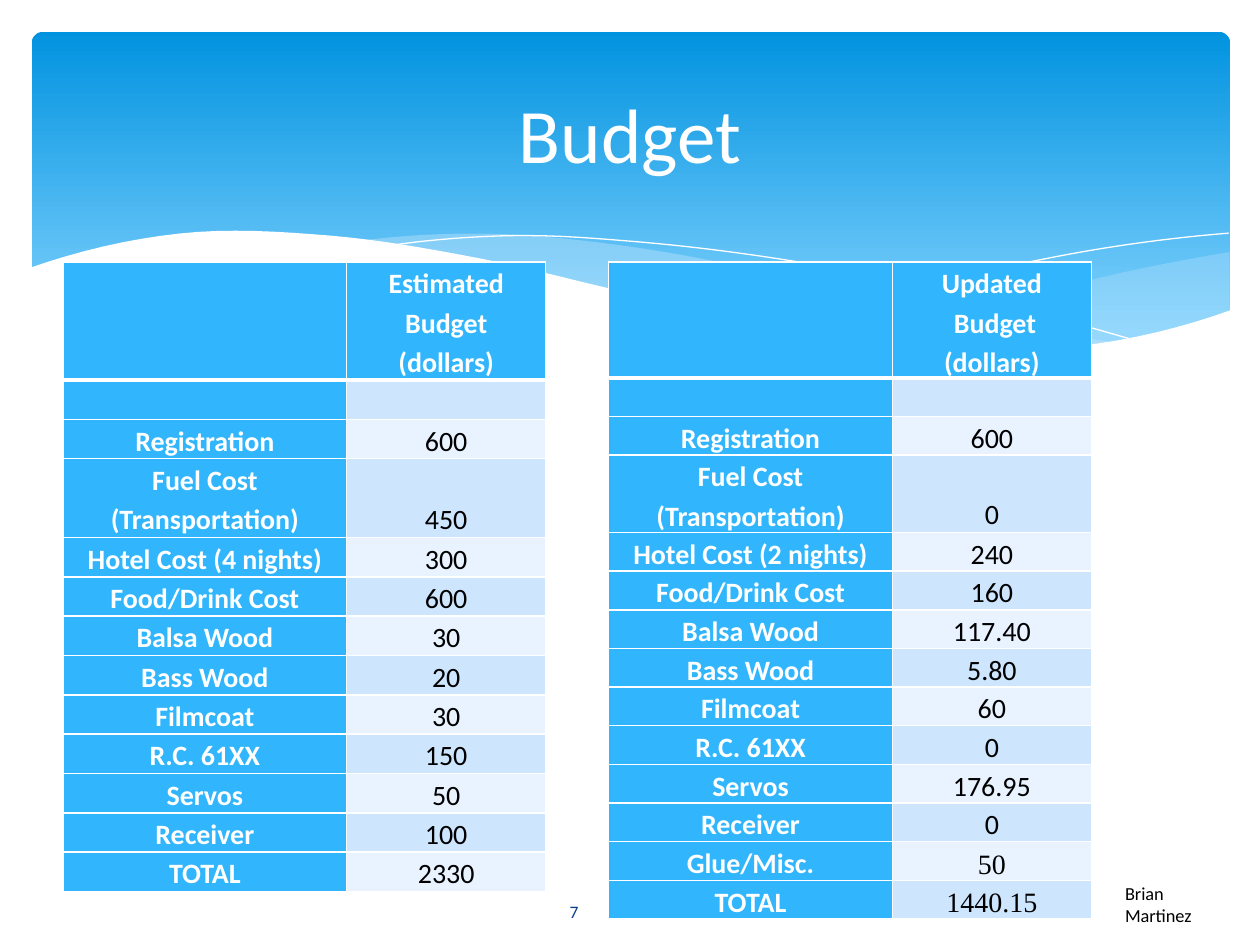
from lxml.etree import SubElement
from pptx import Presentation
from pptx.dml.color import RGBColor
from pptx.enum.shapes import MSO_SHAPE
from pptx.enum.text import MSO_ANCHOR, PP_ALIGN
from pptx.oxml import parse_xml
from pptx.oxml.ns import nsdecls, qn
from pptx.util import Cm, Pt

WHITE = RGBColor(0xFF, 0xFF, 0xFF)
BLACK = RGBColor(0, 0, 0)
NAVY = RGBColor(0x07, 0x3E, 0x87)
DEEP = RGBColor(0x02, 0x93, 0xE0)
SKY = RGBColor(0x83, 0xD3, 0xFE)
MIST = RGBColor(0xC6, 0xE7, 0xFC)
BLUE = RGBColor(0x31, 0xB6, 0xFD)
PALE = RGBColor(0xE8, 0xF3, 0xFF)
TINT = RGBColor(0xCE, 0xE5, 0xFE)
SANS, SERIF = "Calibri", "Times New Roman"

# Item, estimated cost, updated cost; None leaves the item out
ITEMS = [
    ("", "", ""),
    ("Registration", "600", "600"),
    ("Fuel Cost (Transportation)", "450", "0"),
    ("Hotel Cost ({} nights)", "300", "240"),
    ("Food/Drink Cost", "600", "160"),
    ("Balsa Wood", "30", "117.40"),
    ("Bass Wood", "20", "5.80"),
    ("Filmcoat", "30", "60"),
    ("R.C. 61XX", "150", "0"),
    ("Servos", "50", "176.95"),
    ("Receiver", "100", "0"),
    ("Glue/Misc.", None, "50"),
    ("TOTAL", "2330", "1440.15"),
]
TALL = {"Fuel Cost (Transportation)": 2}  # items that take more lines
HEAD = 3  # lines in the header row


def style(para, size, color, face=SANS, bold=False):
    font = para.font
    font.size, font.name, font.bold = Pt(size), face, bold
    font.color.rgb = color


def add_text(slide, box, text, size, color, align=PP_ALIGN.CENTER,
             anchor=MSO_ANCHOR.MIDDLE):
    frame = slide.shapes.add_textbox(*map(Cm, box)).text_frame
    frame.word_wrap = True
    frame.vertical_anchor = anchor
    para = frame.paragraphs[0]
    para.text, para.alignment = text, align
    style(para, size, color)


def add_band(slide):
    band = slide.shapes.add_shape(
        MSO_SHAPE.ROUNDED_RECTANGLE, Cm(0.64), Cm(0.64), Cm(24.16), Cm(6.86))
    band.adjustments[0] = 0.034
    band.shadow.inherit = False
    band.line.fill.background()
    band.fill.gradient()
    band.fill.gradient_angle = 270
    for stop, color, pos in zip(band.fill.gradient_stops, (DEEP, SKY), (0, 0.9)):
        stop.color.rgb, stop.position = color, pos


def smooth(left, right, knots, steps=8):
    """Curve through evenly spaced heights (Catmull-Rom), as points in cm."""
    first = 3 * knots[0] - 3 * knots[1] + knots[2]
    last = 3 * knots[-1] - 3 * knots[-2] + knots[-3]
    full = [first, *knots, last]
    gap = (right - left) / (len(knots) - 1)
    points = []
    for i in range(len(knots) - 1):
        a, b, c, d = full[i:i + 4]
        for k in range(steps):
            t = k / steps
            y = b + t / 2 * (c - a + t * (2 * a - 5 * b + 4 * c - d
                                          + t * (3 * b - a - 3 * c + d)))
            points.append((left + gap * (i + t), y))
    return points + [(right, knots[-1])]


def trace(slide, points, close):
    spots = [(Cm(x), Cm(y)) for x, y in points]
    path = slide.shapes.build_freeform(*spots[0])
    path.add_line_segments(spots[1:], close=close)
    shape = path.convert_to_shape()
    shape.shadow.inherit = False
    return shape


def add_wave(slide, left, right, top, base, color, alpha=100):
    """Fill the area between two curves; alpha is a percentage."""
    edge = smooth(left, right, top) + smooth(left, right, base)[::-1]
    wave = trace(slide, edge, True)
    wave.line.fill.background()
    wave.fill.solid()
    wave.fill.fore_color.rgb = color
    if alpha < 100:
        tint = wave.fill._xPr.find(".//" + qn("a:srgbClr"))
        SubElement(tint, qn("a:alpha")).set("val", str(alpha * 1000))


def add_crest(slide, left, right, knots):
    crest = trace(slide, smooth(left, right, knots), False)
    crest.fill.background()
    crest.line.color.rgb, crest.line.width = WHITE, Pt(0)


def add_waves(slide):
    add_wave(slide, 16.79, 24.79, (6.73, 6.36, 5.93, 5.46, 5.08),
             (6.73, 6.97, 7.05, 6.86, 6.27), MIST, 29)
    add_wave(slide, 7.26, 22.68, (4.85, 4.71, 4.93, 5.38, 6.01, 6.53, 6.93),
             (4.85, 5.28, 5.88, 6.43, 6.85, 7.05, 6.93), MIST, 40)
    add_crest(slide, 7.85, 23.04, (4.95, 4.75, 4.88, 5.18, 5.63, 6.21, 6.91))
    add_crest(slide, 15.57, 24.77, (6.53, 5.92, 5.4, 4.97, 4.7))
    # White front wave with a flat base
    add_wave(slide, 0.58, 24.82,
             (5.41, 4.71, 4.75, 5.21, 5.91, 6.53, 6.95, 6.97, 6.25),
             (8.36, 8.36, 8.36), WHITE)


def add_rules(cell, top, base):
    """Set white cell borders, with widths in points."""
    for spot, (side, width) in enumerate(zip("LRTB", (1, 1, top, base))):
        rule = parse_xml(
            f'<a:ln{side} {nsdecls("a")} w="{Pt(width)}"><a:solidFill>'
            f'<a:srgbClr val="{WHITE}"/></a:solidFill></a:ln{side}>')
        cell._tc.get_or_add_tcPr().insert(spot, rule)


def fill_cell(cell, text, back, color, face, bold):
    cell.fill.solid()
    cell.fill.fore_color.rgb = back
    cell.vertical_anchor = MSO_ANCHOR.BOTTOM
    cell.margin_left = cell.margin_right = Cm(0.18)
    cell.margin_top = cell.margin_bottom = 0
    cell.text = text
    for para in cell.text_frame.paragraphs:
        para.alignment, para.line_spacing = PP_ALIGN.CENTER, 1.15
        style(para, 16, color, face, bold)


def add_budget(slide, left, height, head, costs, nights, serif=()):
    """Add one budget; costs is the column of ITEMS to show."""
    items = [(row[0], row[costs]) for row in ITEMS if row[costs] is not None]
    rows = [("", head)] + items
    lines = [HEAD] + [TALL.get(name, 1) for name, _ in items]
    table = slide.shapes.add_table(
        len(rows), 2, Cm(left), Cm(5.28), Cm(9.73), Cm(height)).table
    for col, width in zip(table.columns, (5.72, 4.01)):
        col.width = Cm(width)
    for i, (name, cost) in enumerate(rows):
        table.rows[i].height = Cm(height * lines[i] / sum(lines))
        label, value = table.cell(i, 0), table.cell(i, 1)
        fill_cell(label, name.format(nights), BLUE, WHITE, SANS, True)
        if i == 0:
            fill_cell(value, cost, BLUE, WHITE, SANS, True)
        else:
            fill_cell(value, cost, TINT if i % 2 else PALE, BLACK,
                      SERIF if name in serif else SANS, False)
        # A thick rule parts the header from the items
        for cell in (label, value):
            add_rules(cell, 3 if i == 1 else 1, 3 if i == 0 else 1)


def main():
    deck = Presentation()
    deck.slide_width, deck.slide_height = Cm(25.4), Cm(19.05)
    slide = deck.slides.add_slide(deck.slide_layouts[6])

    # Backdrop
    add_band(slide)
    add_waves(slide)

    # Title and budgets
    add_text(slide, (1.27, 0.94, 22.86, 3.48), "Budget", 44, WHITE)
    add_budget(slide, 1.27, 12.7, "Estimated Budget (dollars)", 1, 4)
    add_budget(slide, 12.27, 13.25, "Updated\n Budget (dollars)", 2, 2,
               ("Glue/Misc.", "TOTAL"))

    # Footer
    add_text(slide, (22.43, 17.65, 2.64, 0.71), "Brian Martinez", 10.5, BLACK,
             PP_ALIGN.LEFT, MSO_ANCHOR.TOP)
    add_text(slide, (9.96, 17.86, 3.23, 1.02), "7", 10, NAVY)
    deck.save("out.pptx")


if __name__ == "__main__":
    main()
